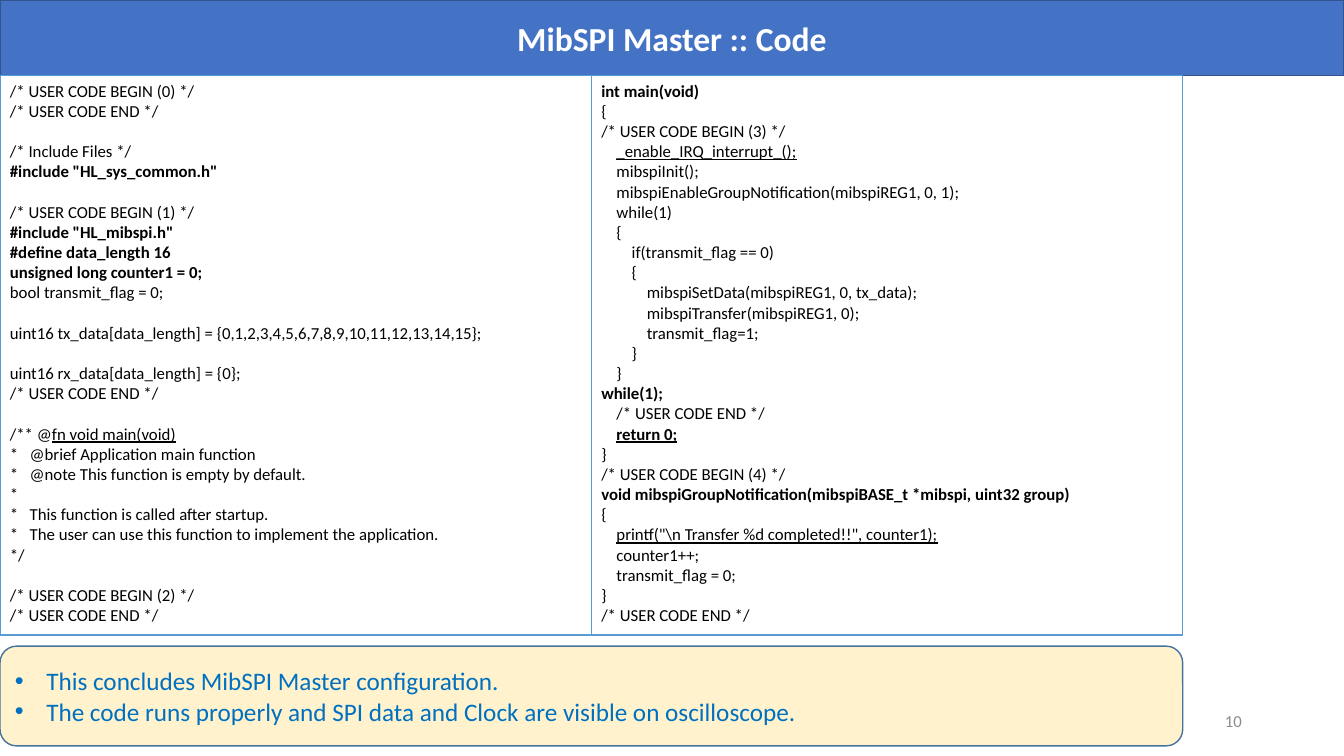
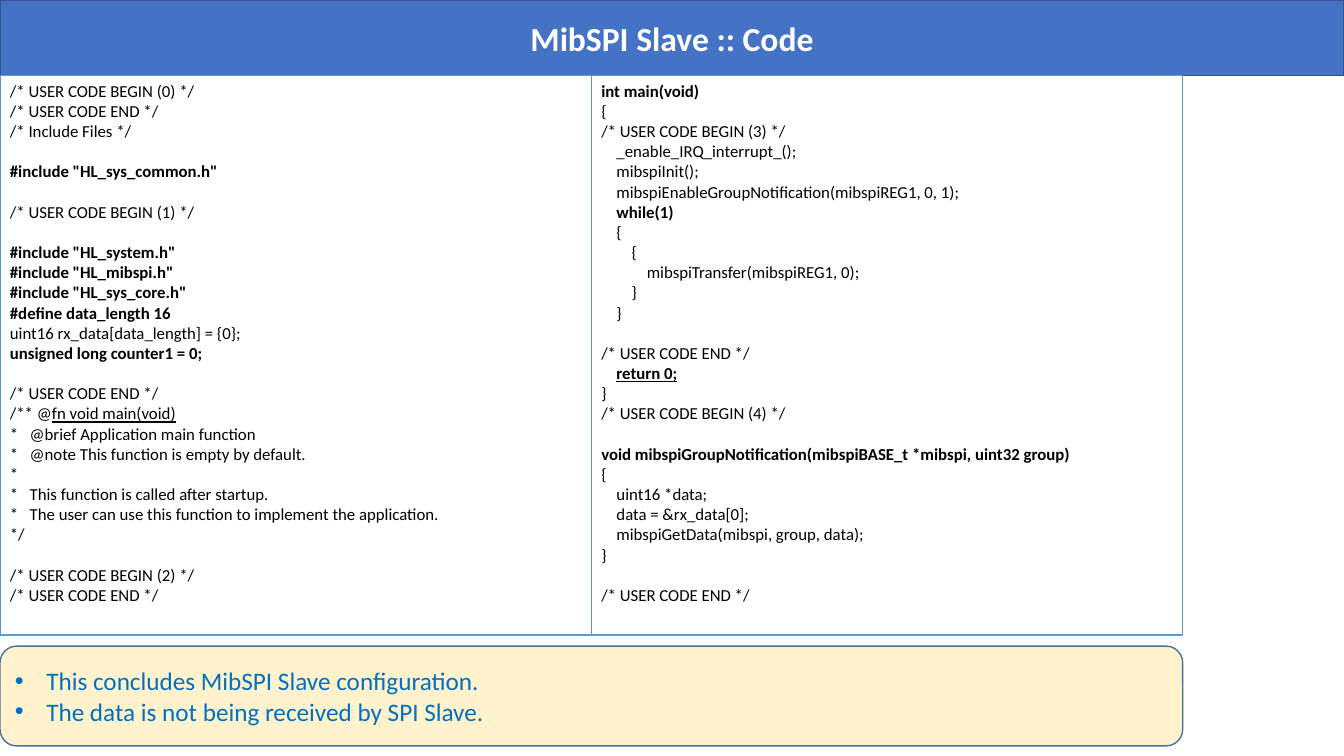
from dataclasses import dataclass

from lxml import etree
from pptx import Presentation
from pptx.dml.color import RGBColor
from pptx.enum.shapes import MSO_SHAPE
from pptx.enum.text import MSO_ANCHOR, PP_ALIGN
from pptx.oxml.ns import qn
from pptx.util import Pt

RECT, ROUND_RECT = MSO_SHAPE.RECTANGLE, MSO_SHAPE.ROUNDED_RECTANGLE
TOP, MIDDLE = MSO_ANCHOR.TOP, MSO_ANCHOR.MIDDLE
LEFT, CENTER, RIGHT, JUSTIFY = (
    PP_ALIGN.LEFT, PP_ALIGN.CENTER, PP_ALIGN.RIGHT, PP_ALIGN.JUSTIFY)


@dataclass(frozen=True)
class Theme:
    font: str = "Calibri"
    title_size: float = 24
    takeaway_size: float = 18
    code_size: float = 12
    number_size: float = 12
    band_fill: str = "4472C4"
    band_line: str = "325491"
    title_text: str = "FFFFFF"
    code_line: str = "5B9BD5"
    code_text: str = "000000"
    takeaway_fill: str = "FFF2CC"
    takeaway_line: str = "43739E"
    takeaway_text: str = "0070C0"
    number_text: str = "8C8C8C"


@dataclass(frozen=True)
class Box:
    left: float
    top: float
    width: float
    height: float


@dataclass(frozen=True)
class Line:
    """One code line; `lead` is plain text before the styled part, `gap` an empty line above."""
    text: str
    depth: int = 0
    bold: bool = False
    underline: bool = False
    gap: bool = False
    lead: str = ""


@dataclass(frozen=True)
class CodeSlide:
    title: str
    left_code: list[Line]
    right_code: list[Line]
    takeaways: list[str]
    number: str = ""


T = Theme()
SLIDE_W, SLIDE_H = 960, 540
BAND_H = 54
COLUMN_W, COLUMN_H = 422.4, 399.6
BAND = Box(0, 0, SLIDE_W, BAND_H)
COLUMNS = [Box(i * COLUMN_W, BAND_H, COLUMN_W, COLUMN_H) for i in range(2)]
TAKEAWAY = Box(0, 461.5, 2 * COLUMN_W, 71.3)
NUMBER = Box(678.2, 500.4, 216, 28.8)
CODE_STEP = 10.85
CODE_LINE_H = 14.4
COMMENT_INDENT = 14.1
BULLET_INDENT = 22.5

USER_CODE_END = Line("/* USER CODE END */")
DOC_COMMENT = [
    Line("*\t@brief Application main function"),
    Line("*\t@note This function is empty by default."),
    Line("*"),
    Line("*\tThis function is called after startup."),
    Line("*\tThe user can use this function to implement the application."),
    Line("*/"),
    Line("/* USER CODE BEGIN (2) */", gap=True),
    USER_CODE_END,
]
FILE_START = [Line("/* USER CODE BEGIN (0) */"), USER_CODE_END]
MAIN_START = [
    Line("int main(void)", bold=True),
    Line("{"),
    Line("/* USER CODE BEGIN (3) */"),
]
MAIN_SETUP = [
    Line("mibspiInit();", 1),
    Line("mibspiEnableGroupNotification(mibspiREG1, 0, 1);", 1),
]
MAIN_END = [
    Line("return 0;", 1, bold=True, underline=True),
    Line("}"),
    Line("/* USER CODE BEGIN (4) */"),
]
DOC_START = "fn void main(void)"
NOTIFICATION = "void mibspiGroupNotification(mibspiBASE_t *mibspi, uint32 group)"

SLIDES = [
    CodeSlide(
        "MibSPI Master :: Code",
        [
            *FILE_START,
            Line("/* Include Files */", gap=True),
            Line('#include "HL_sys_common.h"', bold=True),
            Line("/* USER CODE BEGIN (1) */", gap=True),
            Line('#include "HL_mibspi.h"', bold=True),
            Line("#define data_length 16", bold=True),
            Line("unsigned long counter1 = 0;", bold=True),
            Line("bool transmit_flag = 0;"),
            Line("uint16 tx_data[data_length] = {0,1,2,3,4,5,6,7,8,9,10,11,12,13,14,15};",
                 gap=True),
            Line("uint16 rx_data[data_length] = {0};", gap=True),
            USER_CODE_END,
            Line(DOC_START, underline=True, gap=True, lead="/** @"),
            *DOC_COMMENT,
        ],
        [
            *MAIN_START,
            Line("_enable_IRQ_interrupt_();", 1, underline=True),
            *MAIN_SETUP,
            Line("while(1)", 1),
            Line("{", 1),
            Line("if(transmit_flag == 0)", 2),
            Line("{", 2),
            Line("mibspiSetData(mibspiREG1, 0, tx_data);", 3),
            Line("mibspiTransfer(mibspiREG1, 0);", 3),
            Line("transmit_flag=1;", 3),
            Line("}", 2),
            Line("}", 1),
            Line("while(1);", bold=True),
            Line("/* USER CODE END */", 1),
            *MAIN_END,
            Line(NOTIFICATION, bold=True),
            Line("{"),
            Line(r'printf("\n Transfer %d completed!!", counter1);', 1, underline=True),
            Line("counter1++;", 1),
            Line("transmit_flag = 0;", 1),
            Line("}"),
            USER_CODE_END,
        ],
        ["This concludes MibSPI Master configuration.",
         "The code runs properly and SPI data and Clock are visible on oscilloscope."],
        number="10",
    ),
    CodeSlide(
        "MibSPI Slave :: Code",
        [
            *FILE_START,
            Line("/* Include Files */"),
            Line('#include "HL_sys_common.h"', bold=True, gap=True),
            Line("/* USER CODE BEGIN (1) */", gap=True),
            Line('#include "HL_system.h"', bold=True, gap=True),
            Line('#include "HL_mibspi.h"', bold=True),
            Line('#include "HL_sys_core.h"', bold=True),
            Line("#define data_length 16", bold=True),
            Line("uint16 rx_data[data_length] = {0};"),
            Line("unsigned long counter1 = 0;", bold=True),
            Line("/* USER CODE END */", gap=True),
            Line(DOC_START, underline=True, lead="/** @"),
            *DOC_COMMENT,
        ],
        [
            *MAIN_START,
            Line("_enable_IRQ_interrupt_();", 1),
            *MAIN_SETUP,
            Line("while(1)", 1, bold=True),
            Line("{", 1),
            Line("{", 2),
            Line("mibspiTransfer(mibspiREG1, 0);", 3),
            Line("}", 2),
            Line("}", 1),
            Line("/* USER CODE END */", gap=True),
            *MAIN_END,
            Line(NOTIFICATION, bold=True, gap=True),
            Line("{"),
            Line("uint16 *data;", 1),
            Line("data = &rx_data[0];", 1),
            Line("mibspiGetData(mibspi, group, data);", 1),
            Line("}"),
            Line("/* USER CODE END */", gap=True),
        ],
        ["This concludes MibSPI Slave configuration.",
         "The data is not being received by SPI Slave."],
    ),
]


def place(box: Box) -> tuple:
    return Pt(box.left), Pt(box.top), Pt(box.width), Pt(box.height)


def add_panel(s, kind, box: Box, line: str, weight: float, fill: str = "", anchor=MIDDLE):
    """Add an outlined shape, unfilled when no fill is given, and return its text frame."""
    sp = s.shapes.add_shape(kind, *place(box))
    sp.shadow.inherit = False
    if fill:
        sp.fill.solid()
        sp.fill.fore_color.rgb = RGBColor.from_string(fill)
    else:
        sp.fill.background()
    sp.line.color.rgb = RGBColor.from_string(line)
    sp.line.width = Pt(weight)
    tf = sp.text_frame
    tf.word_wrap = True
    tf.vertical_anchor = anchor
    return tf


def add_paragraph(tf, first: bool, align):
    p = tf.paragraphs[0] if first else tf.add_paragraph()
    p.alignment = align
    return p


def add_run(p, text: str, size: float, color: str,
            bold: bool = False, underline: bool = False) -> None:
    r = p.add_run()
    r.text = text
    r.font.name = T.font
    r.font.size = Pt(size)
    r.font.color.rgb = RGBColor.from_string(color)
    r.font.bold = bold
    r.font.underline = underline


def set_indent(p, left: float, hanging: float = 0) -> None:
    pPr = p._p.get_or_add_pPr()
    pPr.set("marL", str(Pt(left)))
    pPr.set("indent", str(-Pt(hanging)))


def add_bullet(p) -> None:
    pPr = p._p.get_or_add_pPr()
    etree.SubElement(pPr, qn("a:buFont")).set("typeface", "Arial")
    etree.SubElement(pPr, qn("a:buChar")).set("char", "•")


def add_title(s, title: str) -> None:
    tf = add_panel(s, RECT, BAND, T.band_line, 1, T.band_fill)
    add_run(add_paragraph(tf, True, CENTER), title, T.title_size, T.title_text, bold=True)


def add_code(s, box: Box, lines: list[Line]) -> None:
    tf = add_panel(s, RECT, box, T.code_line, 0.75, anchor=TOP)
    for i, line in enumerate(lines):
        p = add_paragraph(tf, i == 0, LEFT)
        if "\t" in line.text:
            set_indent(p, COMMENT_INDENT, COMMENT_INDENT)
        elif line.depth:
            set_indent(p, line.depth * CODE_STEP)
        if line.gap:
            p.space_before = Pt(CODE_LINE_H)
        if line.lead:
            add_run(p, line.lead, T.code_size, T.code_text)
        add_run(p, line.text, T.code_size, T.code_text, line.bold, line.underline)


def add_takeaways(s, takeaways: list[str]) -> None:
    tf = add_panel(s, ROUND_RECT, TAKEAWAY, T.takeaway_line, 1, T.takeaway_fill)
    for i, text in enumerate(takeaways):
        p = add_paragraph(tf, i == 0, JUSTIFY)
        set_indent(p, BULLET_INDENT, BULLET_INDENT)
        add_bullet(p)
        add_run(p, text, T.takeaway_size, T.takeaway_text)


def add_number(s, number: str) -> None:
    tf = s.shapes.add_textbox(*place(NUMBER)).text_frame
    tf.word_wrap = True
    tf.vertical_anchor = MIDDLE
    add_run(add_paragraph(tf, True, RIGHT), number, T.number_size, T.number_text)


def main() -> None:
    prs = Presentation()
    prs.slide_width, prs.slide_height = Pt(SLIDE_W), Pt(SLIDE_H)
    for content in SLIDES:
        s = prs.slides.add_slide(prs.slide_layouts[6])
        add_title(s, content.title)
        if content.number:
            add_number(s, content.number)
        for box, lines in zip(COLUMNS, (content.left_code, content.right_code)):
            add_code(s, box, lines)
        add_takeaways(s, content.takeaways)
    prs.save("out.pptx")


if __name__ == "__main__":
    main()
